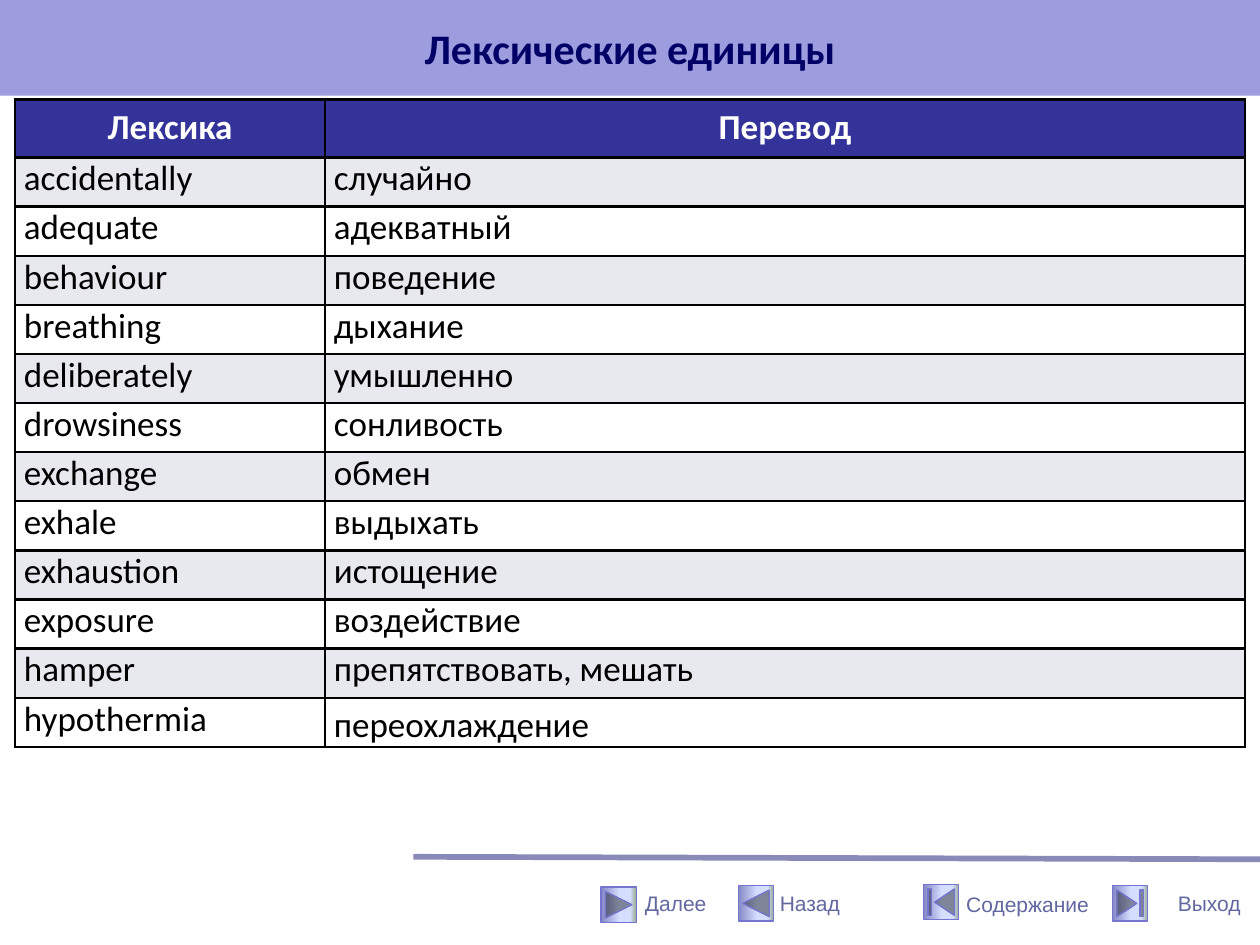
import pptx
import pptx.util
import pptx.dml.color
import pptx.enum.shapes
import pptx.enum.text
import pptx.oxml
import pptx.oxml.ns
from lxml import etree

SHAPE = pptx.enum.shapes.MSO_SHAPE
ALIGN = pptx.enum.text.PP_ALIGN
ANCHOR = pptx.enum.text.MSO_ANCHOR
Inches, Pt, qn = pptx.util.Inches, pptx.util.Pt, pptx.oxml.ns.qn

TITLE = "Лексические единицы"
HEADER = ("Лексика", "Перевод")
WORDS = [
    ("accidentally", "случайно"),
    ("adequate", "адекватный"),
    ("behaviour", "поведение"),
    ("breathing", "дыхание"),
    ("deliberately", "умышленно"),
    ("drowsiness", "сонливость"),
    ("exchange", "обмен"),
    ("exhale", "выдыхать"),
    ("exhaustion", "истощение"),
    ("exposure", "воздействие"),
    ("hamper", "препятствовать, мешать"),
    ("hypothermia", "переохлаждение"),
]
NAVIGATION = [
    ("Выход", SHAPE.ACTION_BUTTON_END, (8.83, 7.03), (9.25, 6.92, 0.75, 0.5), ANCHOR.MIDDLE),
    ("Содержание", SHAPE.ACTION_BUTTON_BEGINNING, (7.33, 7.02), (7.57, 7.03, 1.18, 0.3), ANCHOR.TOP),
    ("Далее", SHAPE.ACTION_BUTTON_FORWARD_OR_NEXT, (4.77, 7.04), (5.02, 7.02, 0.69, 0.3), ANCHOR.TOP),
    ("Назад", SHAPE.ACTION_BUTTON_BACK_OR_PREVIOUS, (5.86, 7.03), (6.09, 7.02, 0.68, 0.3), ANCHOR.TOP),
]
BUTTON_SIZE = 0.28
BUTTON_STOPS = [(0, "8488C4"), (53, "D4DEFF"), (83, "D4DEFF"), (100, "96AB94")]
COLUMNS = (2.46, 7.3)
HEADER_HEIGHT, ROW_HEIGHT = 0.46, 0.39
TITLE_FONT = {"name": "Calibri", "size": Pt(24), "bold": True}
HEADER_FONT = {"name": "Calibri", "size": Pt(20), "bold": True}
WORD_FONT = {"name": "Calibri", "size": Pt(20), "bold": False}
LABEL_FONT = {"name": "Arial", "size": Pt(12), "bold": False}


def rgb(value):
    return pptx.dml.color.RGBColor.from_string(value)


def box(*lengths):
    return [Inches(v) for v in lengths]


def write(tf, text, font, color, align=ALIGN.LEFT):
    p = tf.paragraphs[0]
    p.alignment = align
    r = p.add_run()
    r.text = text
    for name, value in font.items():
        setattr(r.font, name, value)
    r.font.color.rgb = rgb(color)
    return p


def add_button(s, kind, left, top):
    sp = s.shapes.add_shape(kind, *box(left, top, BUTTON_SIZE, BUTTON_SIZE))
    sp.shadow.inherit = False
    sp.fill.gradient()
    sp.fill.gradient_angle = 0
    stops = sp.element.spPr.find(".//" + qn("a:gsLst"))
    for stop in list(stops):
        stops.remove(stop)
    for share, color in BUTTON_STOPS:
        stop = etree.SubElement(stops, qn("a:gs"), pos=str(share * 1000))
        etree.SubElement(stop, qn("a:srgbClr"), val=color)
    sp.line.color.rgb = rgb("7575D1")
    sp.line.width = Pt(0.75)


def add_label(s, text, place, anchor):
    tf = s.shapes.add_textbox(*box(*place)).text_frame
    tf.word_wrap = text == "Содержание"
    tf.vertical_anchor = anchor
    write(tf, text, LABEL_FONT, "61679F")


def format_cell(cell, color, margins):
    tcPr = cell._tc.get_or_add_tcPr()
    for side in ("a:lnL", "a:lnR", "a:lnT", "a:lnB"):
        ln = etree.SubElement(tcPr, qn(side), w=str(Pt(1.5)))
        fill = etree.SubElement(ln, qn("a:solidFill"))
        etree.SubElement(fill, qn("a:srgbClr"), val="000000")
    cell.fill.solid()
    cell.fill.fore_color.rgb = rgb(color)
    cell.margin_left = cell.margin_right = Inches(margins[0])
    cell.margin_top = cell.margin_bottom = Inches(margins[1])


def add_words(s):
    rows = [HEADER] + WORDS
    height = HEADER_HEIGHT + ROW_HEIGHT * len(WORDS)
    frame = s.shapes.add_table(len(rows), len(COLUMNS), *box(0.12, 0.79, sum(COLUMNS), height))
    table = frame.table
    for column, width in zip(table.columns, COLUMNS):
        column.width = Inches(width)
    for i, texts in enumerate(rows):
        table.rows[i].height = Inches(ROW_HEIGHT if i else HEADER_HEIGHT)
        for j, text in enumerate(texts):
            cell = table.cell(i, j)
            if i == 0:
                format_cell(cell, "333399", (0.1, 0.05))
                write(cell.text_frame, text, HEADER_FONT, "FFFFFF", ALIGN.CENTER)
            else:
                format_cell(cell, "E8E8EF" if i % 2 else "FFFFFF", (0.07, 0))
                p = write(cell.text_frame, text, WORD_FONT, "000000")
    p.alignment = ALIGN.JUSTIFY
    p.line_spacing = 1.15
    pPr = p._p.get_or_add_pPr()
    pPr.set("marL", str(Inches(0.5)))
    pPr.set("indent", str(Inches(-0.5)))


def main():
    prs = pptx.Presentation()
    prs.slide_width, prs.slide_height = box(10, 7.5)
    s = prs.slides.add_slide(prs.slide_layouts[5])

    title = s.shapes.title
    title.left, title.top, title.width, title.height = box(0, 0, 10, 0.76)
    title.fill.solid()
    title.fill.fore_color.rgb = rgb("9C9CDF")
    title.text_frame.vertical_anchor = ANCHOR.MIDDLE
    write(title.text_frame, TITLE, TITLE_FONT, "000066", ALIGN.CENTER)

    rule = s.shapes.add_connector(
        pptx.enum.shapes.MSO_CONNECTOR.STRAIGHT, *box(3.28, 6.8, 10, 6.82))
    rule.line.color.rgb = rgb("8A8AB8")
    rule.line.width = Pt(3.25)
    etree.SubElement(rule.element.spPr, qn("a:effectLst"))

    for text, kind, corner, place, anchor in NAVIGATION:
        add_button(s, kind, *corner)
        add_label(s, text, place, anchor)
    add_words(s)
    prs.save("out.pptx")


if __name__ == "__main__":
    main()
